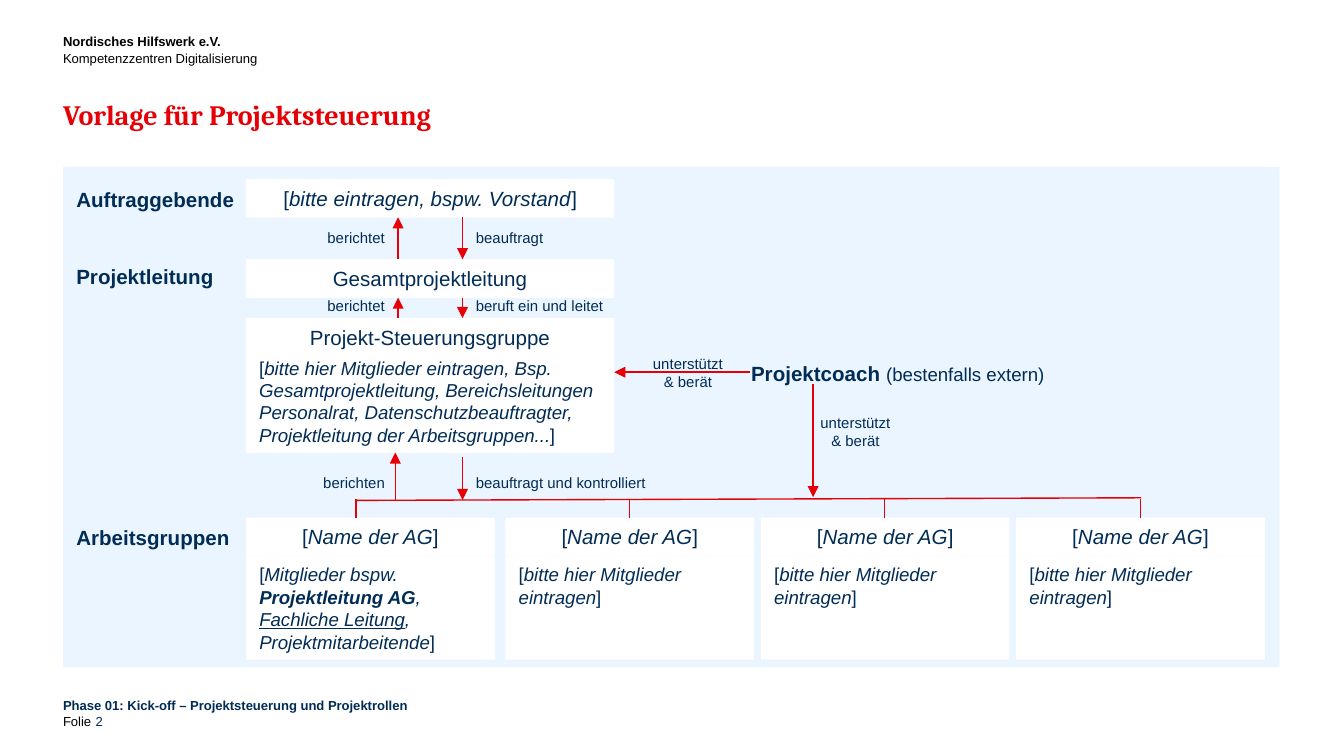
import lxml.etree
import pptx
import pptx.dml.color
import pptx.enum.shapes
import pptx.enum.text
import pptx.oxml.ns
import pptx.util

Pt = pptx.util.Pt
ALIGN = pptx.enum.text.PP_ALIGN
ANCHOR = pptx.enum.text.MSO_ANCHOR
NAVY, RED, BLACK, WHITE, PALE = "002C55", "E60005", "000000", "FFFFFF", "EBF5FF"
GROUP_NAME = [[("[", ""), ("Name der AG", "i"), ("]", "")]]
MEMBERS = [[("[", ""), ("bitte hier Mitglieder eintragen", "i"), ("]", "")]]
LEAD_MEMBERS = [
    [("[", ""), ("Mitglieder bspw. ", "i"), ("Projektleitung AG", "bi"), (", ", "i"),
     ("Fachliche Leitung", "iu"), (",", "i")],
    [("Projektmitarbeitende", "i"), ("]", "")],
]
STEERING_MEMBERS = [
    [("[", ""), ("bitte hier Mitglieder eintragen, Bsp. Gesamtprojektleitung, Bereichsleitungen", "i")],
    [("Personalrat, Datenschutzbeauftragter, ", "i")],
    [("Projektleitung der Arbeitsgruppen...", "i"), ("]", "")],
]


def color(value):
    """Turn a hex string into a colour."""
    return pptx.dml.color.RGBColor.from_string(value)


def fill_text(shape, paragraphs, size, align=ALIGN.LEFT, ink=NAVY, font="Arial",
              spacing=None, inset=True, anchor=ANCHOR.TOP):
    """Write paragraphs of (text, style, optional size) runs into a shape."""
    frame = shape.text_frame
    frame.word_wrap = True
    frame.vertical_anchor = anchor
    if not inset:
        frame.margin_left = frame.margin_right = frame.margin_top = frame.margin_bottom = 0
    for index, runs in enumerate(paragraphs):
        paragraph = frame.add_paragraph() if index else frame.paragraphs[0]
        paragraph.alignment = align
        if spacing:
            paragraph.line_spacing = Pt(spacing)
        for text, style, *own_size in runs:
            run = paragraph.add_run()
            run.text = text
            run.font.name = font
            run.font.size = Pt(own_size[0] if own_size else size)
            run.font.bold = "b" in style
            run.font.italic = "i" in style
            run.font.underline = "u" in style
            run.font.color.rgb = color(ink)


def add_text(slide, box, paragraphs, size, **options):
    """Add a text box."""
    shape = slide.shapes.add_textbox(*map(Pt, box))
    fill_text(shape, paragraphs, size, **options)


def add_box(slide, box, fill=WHITE, paragraphs=(), size=11, align=ALIGN.LEFT):
    """Add a borderless rectangle with optional text."""
    shape = slide.shapes.add_shape(pptx.enum.shapes.MSO_SHAPE.RECTANGLE, *map(Pt, box))
    shape.shadow.inherit = False
    shape.fill.solid()
    shape.fill.fore_color.rgb = color(fill)
    shape.line.fill.background()
    fill_text(shape, paragraphs, size, align)


def add_line(slide, origin, start, end, arrow=True):
    """Add a red line, with an arrowhead at its end if wanted."""
    left, top = origin
    points = (left + start[0], top + start[1], left + end[0], top + end[1])
    line = slide.shapes.add_connector(pptx.enum.shapes.MSO_CONNECTOR.STRAIGHT, *map(Pt, points))
    line.line.color.rgb = color(RED)
    line.line.width = Pt(0.75)
    qn = pptx.oxml.ns.qn
    if arrow:
        lxml.etree.SubElement(line.line._get_or_add_ln(), qn("a:tailEnd"), type="triangle")
    lxml.etree.SubElement(line._element.spPr, qn("a:effectLst"))


def add_header(slide, box):
    """Place the sender lines and the slide title."""
    left, top, width, _ = box
    sender = [[("Nordisches Hilfswerk e.V.", "b")], [("Kompetenzzentren Digitalisierung", "")]]
    add_text(slide, (left, top, 129, 18), sender, 7, ink=BLACK, spacing=9, inset=False)
    add_text(slide, (left, top + 38, width, 26.5), [[("Vorlage für Projektsteuerung", "b")]], 15,
             ink=RED, font="Cambria", spacing=15, inset=False)


def add_footer(slide, box):
    """Place the phase line and the page number."""
    left, top, width, _ = box
    phase = [[("Phase 01: Kick-off – Projektsteuerung und Projektrollen", "b")]]
    add_text(slide, (left, top, width, 6.5), phase, 7, spacing=9, inset=False)
    for offset, text, ink in ((0, "Folie", BLACK), (17.4, "2", NAVY)):
        add_text(slide, (left + offset, top + 8.4, 21.6, 9), [[(text, "")]], 7, ink=ink,
                 spacing=9, inset=False, anchor=ANCHOR.BOTTOM)


def add_leadership(slide, box):
    """Place the client, the project lead and the steering group with their relations."""
    left, top, width, _ = box
    client = [[("[", ""), ("bitte eintragen, bspw. Vorstand", "i"), ("]", "")]]
    lead, steering = [[("Gesamtprojektleitung", "")]], [[("Projekt-Steuerungsgruppe", "")]]
    for offset, paragraphs in ((6.5, client), (49.5, lead), (81, steering)):
        add_box(slide, (left, top + offset, width, 20.7), WHITE, paragraphs, 11, ALIGN.CENTER)
    add_box(slide, (left, top + 98, width, 55.4), WHITE, STEERING_MEMBERS, 10)
    for x, start, end in ((81.5, 49.5, 27), (116, 27, 49.5), (81.5, 81, 70),
                          (116, 70, 81), (80, 179, 153), (116, 155.5, 178.5)):
        add_line(slide, (left, top), (x, start), (x, end))
    for offset, report, order in ((29.3, "berichtet", "beauftragt"),
                                  (66, "berichtet", "beruft ein und leitet"),
                                  (161, "berichten", "beauftragt und kontrolliert")):
        add_text(slide, (left - 19.5, top + offset, 101, 17), [[(report, "")]], 8, align=ALIGN.RIGHT)
        add_text(slide, (left + 116, top + offset, 134, 17), [[(order, "")]], 8)


def add_coach(slide, box):
    """Place the project coach with its two support arrows."""
    left, top, width, height = box
    coach = [[("Projektcoach ", "b"), ("(bestenfalls extern)", "", 10)]]
    add_text(slide, box, coach, 11)
    add_line(slide, (left, top), (6.5, 9.5), (-66.2, 9.5))
    add_line(slide, (left, top), (40.3, 16), (40.3, 76.5))
    support = [[("unterstützt", "")], [("& berät", "")]]
    for x, y, label_width in ((-59.7, -3.5, 66), (32.5, 28, 61)):
        add_text(slide, (left + x, top + y, label_width, 26.6), support, 8, align=ALIGN.CENTER)


def add_groups(slide, box):
    """Place the four working groups under their connecting line."""
    left, top, width, height = box
    add_line(slide, (left, top), (59, -9.3), (479.5, -10.7), arrow=False)
    for index, (offset, drop) in enumerate(((0, 59), (139, 205.3), (275.8, 342), (412.6, 479.3))):
        add_box(slide, (left + offset, top, 133.2, 20.7), WHITE, GROUP_NAME, 11, ALIGN.CENTER)
        members = MEMBERS if index else LEAD_MEMBERS
        add_box(slide, (left + offset, top + 20.7, 133.2, height - 20.7), WHITE, members, 10)
        add_line(slide, (left, top), (drop, -10), (drop, 0), arrow=False)


def add_chart_panel(slide, box):
    """Place the organisation panel with its row headings and regions."""
    left, top, width, height = box
    add_box(slide, box, PALE)
    for offset, heading in ((7, "Auftraggebende"), (48.7, "Projektleitung"), (188.4, "Arbeitsgruppen")):
        add_text(slide, (left, top + offset, 111.6, 20.7), [[(heading, "b")]], 11)
    add_leadership(slide, (left + 98, top, 197.3, 180))
    add_coach(slide, (left + 361.5, top + 100.5, 184.3, 20.7))
    add_groups(slide, (left + 98, top + 188, 545.8, 76))


def main():
    """Build and save the presentation."""
    presentation = pptx.Presentation()
    presentation.slide_width, presentation.slide_height = Pt(720), Pt(405)
    slide = presentation.slides.add_slide(presentation.slide_layouts[6])
    add_header(slide, (33.8, 17.3, 652, 65))
    add_chart_panel(slide, (33.8, 89.4, 651.6, 268))
    add_footer(slide, (33.8, 373, 652, 18))
    presentation.save("out.pptx")


if __name__ == "__main__":
    main()
